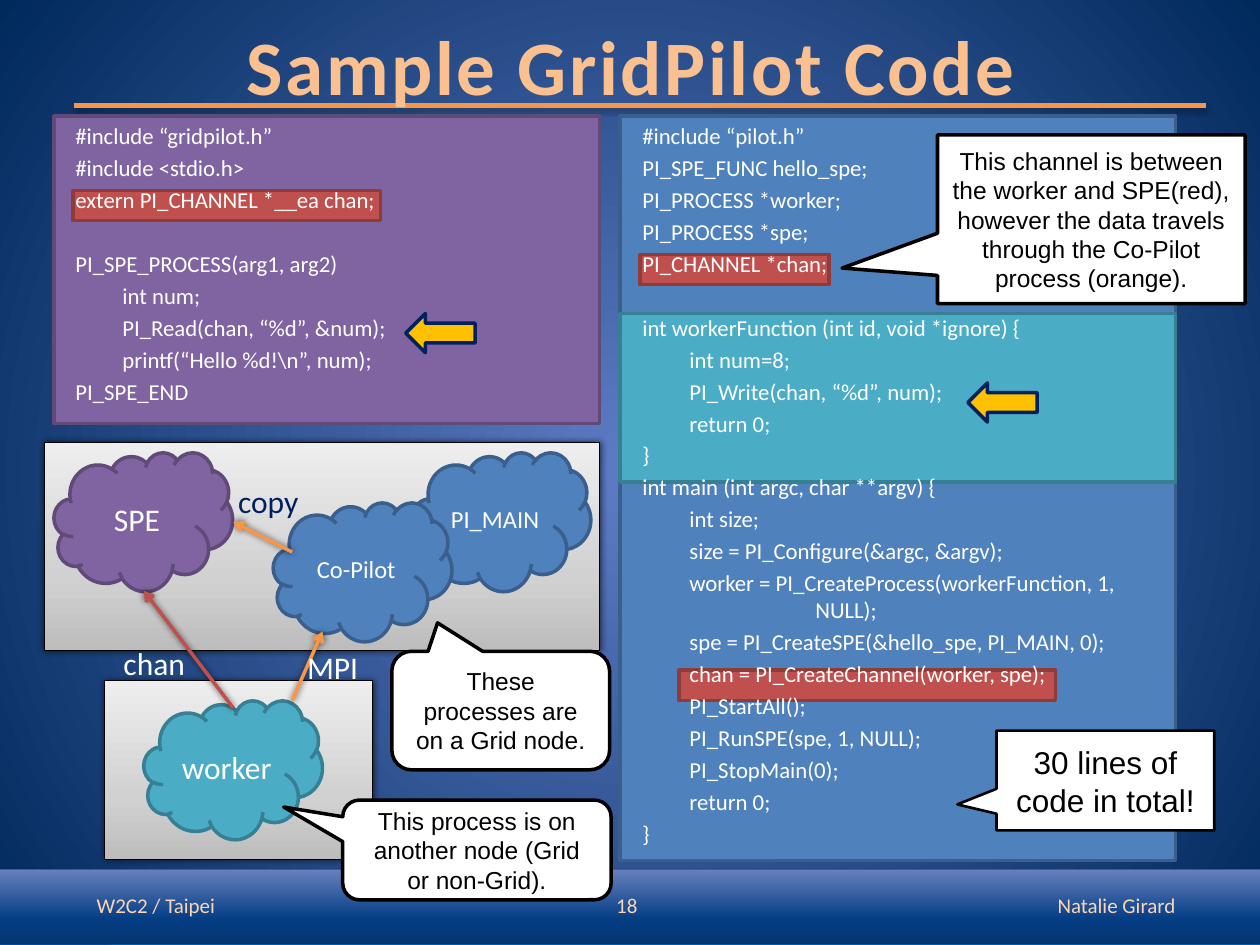
from typing import NamedTuple

from lxml.etree import SubElement
from pptx import Presentation
from pptx.dml.color import RGBColor
from pptx.enum.shapes import MSO_CONNECTOR as Connector, MSO_SHAPE as Preset
from pptx.enum.text import MSO_ANCHOR as Anchor, PP_ALIGN as Align
from pptx.oxml.ns import qn
from pptx.util import Cm, Pt

COLORS = {
    "white": "FFFFFF", "black": "000000", "navy": "002060", "gold": "FFC000",
    "orange": "F79646", "peach": "FAC090", "pale": "FCD5B5", "bar edge": "0070C0",
    "blue": "4F81BD", "blue edge": "3A5F8C", "red": "C0504D", "red edge": "8E3B39",
    "teal": "4BACC6", "teal edge": "377F92", "purple": "8064A2", "purple edge": "5F4A78",
}
BACKGROUND = [(0, "5E7CC5"), (100, "00295C")]
BAR = [(0, "043470"), (35, "053E85"), (100, "667FBD")]
GREY = [(0, "BDBDBD"), (35, "D1D1D1"), (100, "EEEEEE")]
LINE_GAP = 2.6    # points above each code line
BLANK_LINE = 18.2  # points taken by an empty code line


class Box(NamedTuple):
    left: float
    top: float
    width: float
    height: float


class Shadow(NamedTuple):
    opacity: int
    blur: float
    distance: float


class Panel(NamedTuple):
    box: Box
    color: str


class Cloud(NamedTuple):
    text: str
    left: float
    top: float
    color: str
    size: int


class Callout(NamedTuple):
    text: str
    box: Box
    preset: Preset
    tip: tuple
    size: int = 14
    line_width: float = 2


class Label(NamedTuple):
    text: str
    box: Box
    format: dict


class Arrow(NamedTuple):
    start: tuple
    end: tuple
    color: str


SOFT = Shadow(64, 4, 0)
DROP = Shadow(35, 3.1, 2)

NODES = [Box(2.11, 13.72, 5.41, 3.61), Box(0.89, 8.92, 11.2, 4.19)]
PANELS = [
    Panel(Box(12.5, 2.34, 11.2, 15.01), "blue"),
    Panel(Box(12.9, 5.13, 3.81, 0.61), "red"),
    Panel(Box(13.69, 13.51, 7.59, 0.61), "red"),
    Panel(Box(12.5, 6.32, 11.2, 3.4), "teal"),
    Panel(Box(1.09, 2.34, 11, 6.2), "purple"),
    Panel(Box(1.47, 3.84, 6.2, 0.61), "red"),
]
SPE_CODE = r"""#include “gridpilot.h”
#include <stdio.h>
extern PI_CHANNEL *__ea chan;

PI_SPE_PROCESS(arg1, arg2)
>int num;
>PI_Read(chan, “%d”, &num);
>printf(“Hello %d!\n”, num);
PI_SPE_END"""
MAIN_CODE = """#include “pilot.h”
PI_SPE_FUNC hello_spe;
PI_PROCESS *worker;
PI_PROCESS *spe;
PI_CHANNEL *chan;

int workerFunction (int id, void *ignore) {
>int num=8;
>PI_Write(chan, “%d”, num);
>return 0;
}
int main (int argc, char **argv) {
>int size;
>size = PI_Configure(&argc, &argv);
>worker = PI_CreateProcess(workerFunction, 1, |>NULL);
>spe = PI_CreateSPE(&hello_spe, PI_MAIN, 0);
>chan = PI_CreateChannel(worker, spe);
>PI_StartAll();
>PI_RunSPE(spe, 1, NULL);
>PI_StopMain(0);
>return 0;
}"""
CLOUDS = [
    Cloud("SPE", 1.09, 9.12, "purple", 18),
    Cloud("worker", 2.9, 14.12, "teal", 18),
    Cloud("PI_MAIN", 8.31, 9.12, "blue", 14),
    Cloud("Co-Pilot", 5.51, 10.13, "blue", 14),
]
ARROWS = [
    Arrow((4.7, 14.27), (2.9, 11.91), "red"),
    Arrow((5.89, 14.12), (6.5, 12.73), "orange"),
    Arrow((5.89, 11.13), (4.7, 10.52), "orange"),
]
ROUND, SQUARE = Preset.ROUNDED_RECTANGULAR_CALLOUT, Preset.RECTANGULAR_CALLOUT
CALLOUTS = [
    Callout("These processes are on a Grid node.",
            Box(7.9, 13.13, 4.39, 2.39), ROUND, (-0.29, -0.74)),
    Callout("This process is on another node (Grid or non-Grid).",
            Box(6.91, 16.13, 5.41, 2.01), ROUND, (-0.72, -0.43)),
    Callout("This channel is between the worker and SPE(red), however the data "
            "travels through the Co-Pilot process (orange).",
            Box(18.9, 2.72, 6.2, 3.4), SQUARE, (-0.81, 0.29)),
    Callout("30 lines of code in total!",
            Box(20.09, 14.73, 4.39, 2.01), SQUARE, (-0.68, 0.24), 18, 1.5),
]
FOOTER = {"size": 12, "color": "pale", "anchor": Anchor.MIDDLE}
LABELS = [
    Label("Sample GridPilot Code", Box(1.3, -0.28, 22.86, 3.18),
          {"size": 44, "color": "peach", "bold": True, "spacing": 1.5,
           "align": Align.CENTER, "anchor": Anchor.MIDDLE}),
    Label("W2C2 / Taipei", Box(1.7, 17.73, 4.19, 1.02), FOOTER),
    Label("Natalie Girard", Box(19.3, 17.73, 4.65, 1.02), {**FOOTER, "align": Align.RIGHT}),
    Label("18", Box(11.3, 17.73, 1.8, 1.02), {**FOOTER, "align": Align.RIGHT}),
    Label("chan", Box(2.24, 12.85, 1.8, 1.02), {"wrap": False}),
    Label("MPI", Box(5.94, 12.93, 1.55, 1.02), {"wrap": False}),
    Label("copy", Box(4.55, 9.6, 1.78, 1.02), {"wrap": False, "color": "navy"}),
]


def rgb(name: str) -> RGBColor:
    return RGBColor.from_string(COLORS[name])


def write_text(shape, text: str, *, size=18, color="white", font="Calibri", bold=False,
               align=Align.LEFT, anchor=Anchor.TOP, wrap=True, spacing=0, hanging=0) -> None:
    """Fill a shape with text; a hanging indent adds code-line spacing."""
    frame = shape.text_frame
    frame.word_wrap, frame.vertical_anchor = wrap, anchor
    gap, paragraph = LINE_GAP, None
    for line in text.split("\n"):
        if not line:
            gap += BLANK_LINE
            continue
        paragraph = frame.add_paragraph() if paragraph is not None else frame.paragraphs[0]
        paragraph.text = line
        paragraph.alignment = align
        if hanging:
            paragraph.space_before, gap = Pt(gap), LINE_GAP
            properties = paragraph._p.get_or_add_pPr()
            properties.set("marL", str(Cm(hanging)))
            properties.set("indent", str(-Cm(hanging)))
        for line_break in paragraph._p.findall(qn("a:br")):
            SubElement(line_break, qn("a:rPr"), sz=str(size * 100))
        for run in paragraph.runs:
            run.font.size, run.font.name, run.font.bold = Pt(size), font, bold
            run.font.color.rgb = rgb(color)
            if spacing:
                run.font._element.set("spc", str(int(spacing * 100)))


def set_gradient(fill, element, stops: list, radial=False) -> None:
    fill.gradient()
    gradient = next(element.iter(qn("a:gradFill")))
    for child in list(gradient):
        gradient.remove(child)
    stop_list = SubElement(gradient, qn("a:gsLst"))
    for position, color in stops:
        stop = SubElement(stop_list, qn("a:gs"), pos=str(position * 1000))
        SubElement(stop, qn("a:srgbClr"), val=color)
    if radial:
        center = SubElement(gradient, qn("a:path"), path="circle")
        SubElement(center, qn("a:fillToRect"), dict.fromkeys("ltrb", "50000"))
    else:
        SubElement(gradient, qn("a:lin"), ang="16200000", scaled="0")


def add_shadow(effects, shadow: Shadow) -> None:
    outer = SubElement(effects, qn("a:outerShdw"), blurRad=str(Pt(shadow.blur)),
                       dist=str(Pt(shadow.distance)), dir="5400000", rotWithShape="0")
    color = SubElement(outer, qn("a:srgbClr"), val=COLORS["black"])
    SubElement(color, qn("a:alpha"), val=str(shadow.opacity * 1000))


def add_box(slide, preset, box: Box, fill, edge: str, line_width=2.0, shadow=None):
    """Add a shape whose fill is a colour name or a list of gradient stops."""
    shape = slide.shapes.add_shape(preset, *map(Cm, box))
    shape.shadow.inherit = False
    if isinstance(fill, str):
        shape.fill.solid()
        shape.fill.fore_color.rgb = rgb(fill)
    else:
        set_gradient(shape.fill, shape._element, fill)
    shape.line.color.rgb, shape.line.width = rgb(edge), Pt(line_width)
    if shadow:
        add_shadow(shape._element.spPr.find(qn("a:effectLst")), shadow)
    return shape


def add_line(slide, start: tuple, end: tuple, color: str, line_width: float,
             shadow: Shadow, arrowhead=True) -> None:
    line = slide.shapes.add_connector(Connector.STRAIGHT, *map(Cm, start + end))
    line.line.color.rgb, line.line.width = rgb(color), Pt(line_width)
    if arrowhead:
        SubElement(line.line._get_or_add_ln(), qn("a:tailEnd"), type="arrow")
    add_shadow(SubElement(line._element.spPr, qn("a:effectLst")), shadow)


def add_label(slide, text: str, box: Box, **text_format) -> None:
    write_text(slide.shapes.add_textbox(*map(Cm, box)), text, **text_format)


def main() -> None:
    presentation = Presentation()
    presentation.slide_width, presentation.slide_height = Cm(25.4), Cm(19.05)
    slide = presentation.slides.add_slide(presentation.slide_layouts[6])

    # Background, footer bar and title rule
    set_gradient(slide.background.fill, slide._element, BACKGROUND, radial=True)
    add_box(slide, Preset.ROUNDED_RECTANGLE, Box(-0.3, 17.53, 26.01, 1.52), BAR,
            "bar edge", 0.5, DROP)
    add_line(slide, (1.5, 2.13), (24.31, 2.13), "orange", 2.75, DROP, arrowhead=False)

    # Nodes, code panels and highlights
    for node in NODES:
        add_box(slide, Preset.RECTANGLE, node, GREY, "black", 0.5, SOFT)
    for panel in PANELS:
        add_box(slide, Preset.RECTANGLE, panel.box, panel.color, f"{panel.color} edge")

    # Code listings: ">" marks a tab and "|" a line break
    for left, code in ((1.27, SPE_CODE), (12.7, MAIN_CODE)):
        lines = code.replace("\n>", "\n\t").replace("|>", "\v\t\t")
        add_label(slide, lines, Box(left, 2.34, 11.23, 15.19), size=13, hanging=0.95)

    # Process diagram
    for cloud in CLOUDS:
        shape = add_box(slide, Preset.CLOUD, Box(cloud.left, cloud.top, 3.6, 2.8),
                        cloud.color, f"{cloud.color} edge")
        write_text(shape, cloud.text, size=cloud.size, align=Align.CENTER,
                   anchor=Anchor.MIDDLE)
    for arrow in ARROWS:
        add_line(slide, arrow.start, arrow.end, arrow.color, 2, SOFT)

    # Callouts
    for callout in CALLOUTS:
        shape = add_box(slide, callout.preset, callout.box, "white", "black",
                        callout.line_width)
        for index, offset in enumerate(callout.tip):
            shape.adjustments[index] = offset
        write_text(shape, callout.text, size=callout.size, color="black", font="Arial",
                   align=Align.CENTER, anchor=Anchor.MIDDLE)

    # Pointers to the read and write calls
    for left, top in ((19.51, 7.72), (8.18, 6.32)):
        add_box(slide, Preset.LEFT_ARROW, Box(left, top, 1.4, 0.79), "gold", "navy")

    # Title, footer and arrow labels
    for label in LABELS:
        add_label(slide, label.text, label.box, **label.format)

    presentation.save("out.pptx")


if __name__ == "__main__":
    main()
